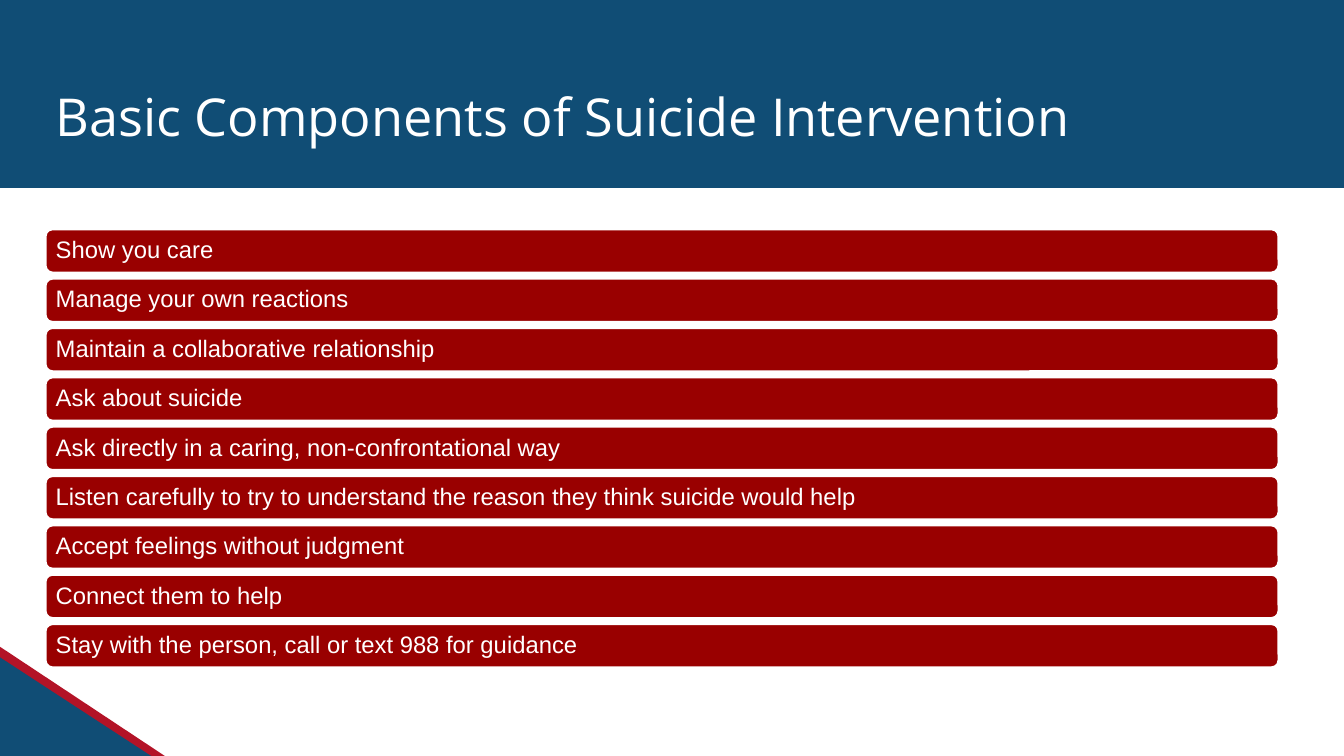
from pptx import Presentation
from pptx import util as u
from pptx.dml.color import RGBColor
from pptx.enum import shapes, text

PX = 9525
NAVY, RED, MAROON, WHITE = "104D75", "B31327", "990000", "FFFFFF"
FORM = shapes.MSO_SHAPE
STEPS = [
    "Show you care",
    "Manage your own reactions",
    "Maintain a collaborative relationship",
    "Ask about suicide",
    "Ask directly in a caring, non-confrontational way",
    "Listen carefully to try to understand the reason they think suicide would help",
    "Accept feelings without judgment",
    "Connect them to help",
    "Stay with the person, call or text 988 for guidance",
]


def px(n):
    return u.Emu(n * PX)


def color(code):
    return RGBColor.from_string(code)


def add_form(slide, kind, box, fill, line=None):
    form = slide.shapes.add_shape(kind, *map(px, box))
    form.shadow.inherit = False
    form.fill.solid()
    form.fill.fore_color.rgb = color(fill)
    if line:
        form.line.color.rgb = color(line)
        form.line.width = u.Pt(2)
    else:
        form.line.fill.background()
    return form


def write(frame, words, font, size, anchor, inset):
    """Put one left-aligned white line in the frame."""
    frame.word_wrap = True
    frame.auto_size = text.MSO_AUTO_SIZE.NONE
    frame.vertical_anchor = anchor
    frame.margin_left = frame.margin_right = px(inset)
    frame.margin_top = frame.margin_bottom = px(inset)
    para = frame.paragraphs[0]
    para.alignment = text.PP_ALIGN.LEFT
    run = para.add_run()
    run.text = words
    run.font.name = font
    run.font.size = u.Pt(size)
    run.font.color.rgb = color(WHITE)
    return para


def add_title(slide, words):
    title = slide.shapes.title
    title.left, title.top, title.width, title.height = map(px, (43, 70, 1192, 87))
    write(title.text_frame, words, "Open Sans", 37.3, text.MSO_ANCHOR.TOP, 10)
    # Bring the title in front of the band
    slide.shapes._spTree.append(title._element)


def add_bar(slide, row, words):
    box = (43, 218 + 47 * row, 1175, 42)
    bar = add_form(slide, FORM.ROUNDED_RECTANGLE, box, MAROON, WHITE)
    para = write(bar.text_frame, words, "Arial", 17, text.MSO_ANCHOR.MIDDLE, 8)
    para.line_spacing = 0.9


def main():
    deck = Presentation()
    deck.slide_width, deck.slide_height = px(1280), px(720)
    slide = deck.slides.add_slide(deck.slide_layouts[5])
    add_form(slide, FORM.RECTANGLE, (0, 0, 1280, 179), NAVY)
    add_form(slide, FORM.RIGHT_TRIANGLE, (0, 616, 157, 104), RED)
    add_form(slide, FORM.RIGHT_TRIANGLE, (0, 626, 144, 94), NAVY)
    add_title(slide, "Basic Components of Suicide Intervention")
    for row, words in enumerate(STEPS):
        add_bar(slide, row, words)
    deck.save("out.pptx")


if __name__ == "__main__":
    main()
